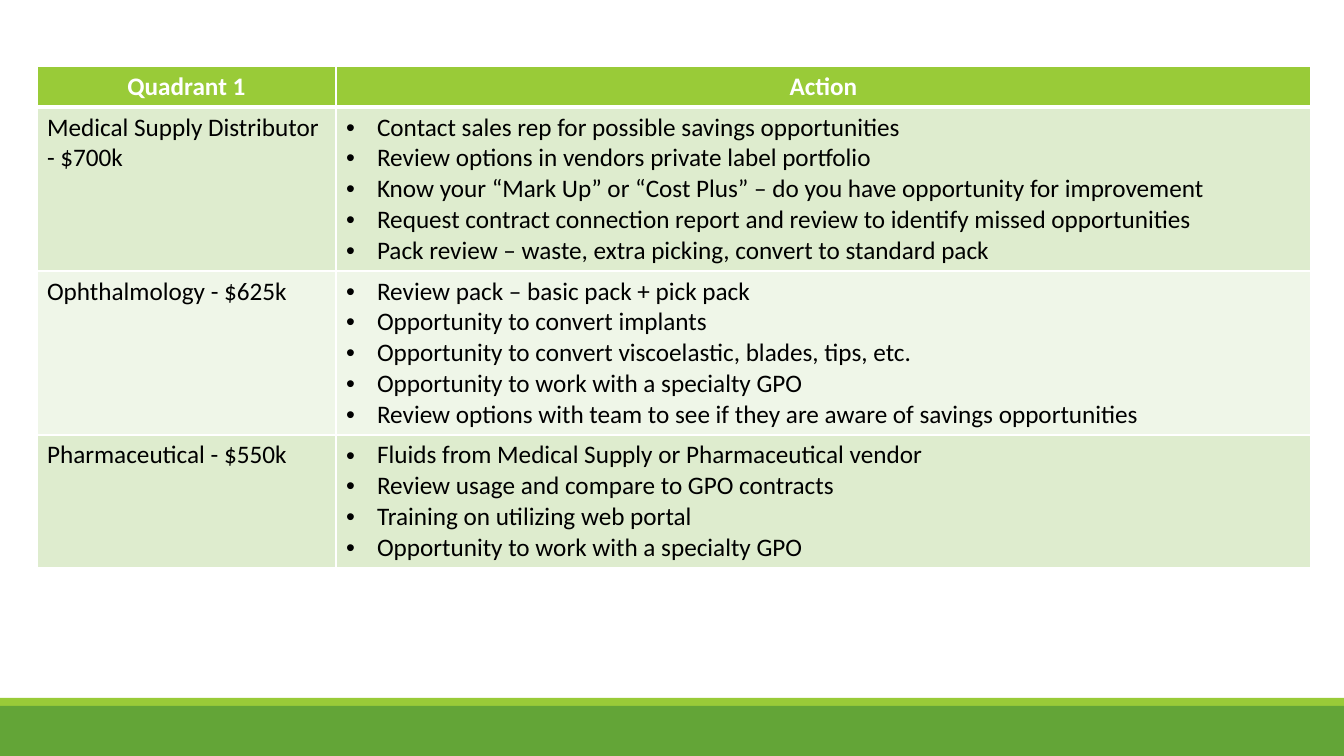
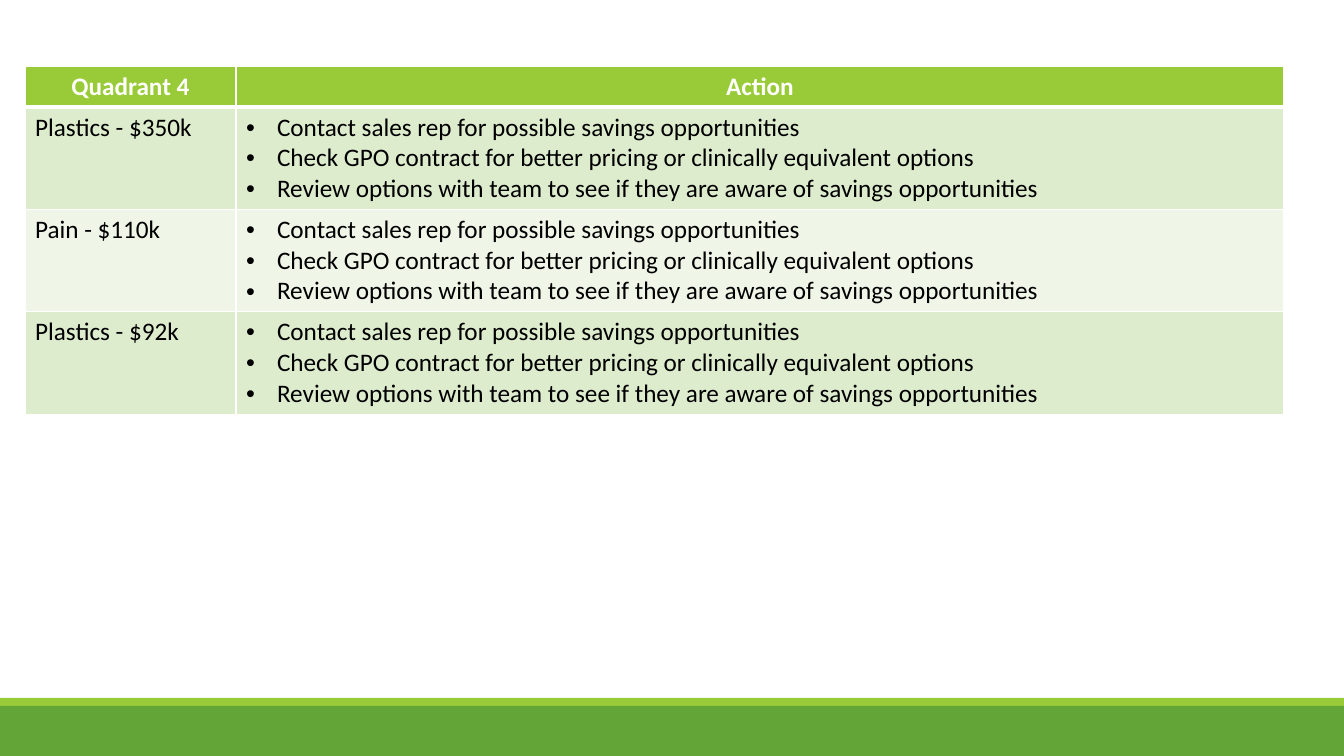
"""Build two spend quadrant slides, each with a table of savings actions."""
import pptx
import pptx.dml.color
import pptx.enum.shapes
import pptx.enum.text
import pptx.oxml.ns
import pptx.util
from lxml import etree

RGBColor = pptx.dml.color.RGBColor
PP_ALIGN = pptx.enum.text.PP_ALIGN

LIME = RGBColor(0x99, 0xCB, 0x38)
GREEN = RGBColor(0x63, 0xA5, 0x37)
ROW_DARK = RGBColor(0xDE, 0xEC, 0xCE)
ROW_LIGHT = RGBColor(0xEF, 0xF6, 0xE8)
WHITE = RGBColor(0xFF, 0xFF, 0xFF)
BLACK = RGBColor(0, 0, 0)
FONT = "Calibri"

SLIDE_WIDTH, SLIDE_HEIGHT = 1344, 756
EMU_PER_PX = pptx.util.Inches(1) / 100.8
TABLE_TOP = 66
LINE_HEIGHT, ROW_PADDING = 30.7, 10
BULLET_INDENT = 31
BANDS = [(698, 8, LIME), (706, 50, GREEN)]

CONTACT = "Contact sales rep for possible savings opportunities"
TEAM_REVIEW = "Review options with team to see if they are aware of savings opportunities"
SPECIALTY_GPO = "Opportunity to work with a specialty GPO"
STANDARD_ACTIONS = [
    CONTACT,
    "Check GPO contract for better pricing or clinically equivalent options",
    TEAM_REVIEW,
]

QUADRANTS = [
    {
        "title": "Quadrant 1",
        "left": 37,
        "columns": (299, 975),
        "categories": [
            ("Medical Supply Distributor - $700k", [
                CONTACT,
                "Review options in vendors private label portfolio",
                "Know your “Mark Up” or “Cost Plus” – do you have opportunity for improvement",
                "Request contract connection report and review to identify missed opportunities",
                "Pack review – waste, extra picking, convert to standard pack",
            ]),
            ("Ophthalmology - $625k", [
                "Review pack – basic pack + pick pack",
                "Opportunity to convert implants",
                "Opportunity to convert viscoelastic, blades, tips, etc.",
                SPECIALTY_GPO,
                TEAM_REVIEW,
            ]),
            ("Pharmaceutical - $550k", [
                "Fluids from Medical Supply or Pharmaceutical vendor",
                "Review usage and compare to GPO contracts",
                "Training on utilizing web portal",
                SPECIALTY_GPO,
            ]),
        ],
    },
    {
        "title": "Quadrant 4",
        "left": 25,
        "columns": (211, 1048),
        "categories": [
            ("Plastics - $350k", STANDARD_ACTIONS),
            ("Pain - $110k", STANDARD_ACTIONS),
            ("Plastics - $92k", STANDARD_ACTIONS),
        ],
    },
]


def px(length):
    return pptx.util.Emu(round(length * EMU_PER_PX))


def add_xml(parent, tag, **attributes):
    element = etree.SubElement(parent, pptx.oxml.ns.qn(tag))
    for name, value in attributes.items():
        element.set(name, str(value))
    return element


def write_text(frame, lines, size=18, color=BLACK, bold=False,
               align=PP_ALIGN.LEFT, bullets=False):
    for index, line in enumerate(lines):
        paragraph = frame.paragraphs[0] if index == 0 else frame.add_paragraph()
        paragraph.alignment = align
        if bullets:
            properties = paragraph._p.get_or_add_pPr()
            properties.set("marL", str(px(BULLET_INDENT)))
            properties.set("indent", str(-px(BULLET_INDENT)))
            add_xml(properties, "a:buFont", typeface="Arial")
            add_xml(properties, "a:buChar", char="•")
        run = paragraph.add_run()
        run.text = line
        run.font.name = FONT
        run.font.size = pptx.util.Pt(size)
        run.font.bold = bold
        run.font.color.rgb = color


def style_cell(cell, fill, top=1, bottom=1):
    properties = cell._tc.get_or_add_tcPr()
    for side, width in (("L", 1), ("R", 1), ("T", top), ("B", bottom)):
        border = add_xml(properties, f"a:ln{side}", w=pptx.util.Pt(width))
        add_xml(add_xml(border, "a:solidFill"), "a:srgbClr", val=WHITE)
    cell.fill.solid()
    cell.fill.fore_color.rgb = fill


def add_master_bands(master, slide):
    for top, height, color in BANDS:
        band = slide.shapes.add_shape(
            pptx.enum.shapes.MSO_SHAPE.RECTANGLE,
            0, px(top), px(SLIDE_WIDTH), px(height))
        band.shadow.inherit = False
        band.fill.solid()
        band.fill.fore_color.rgb = color
        band.line.fill.background()
        master.shapes.element.append(band.element)


def add_action_table(slide, quadrant):
    categories = quadrant["categories"]
    line_counts = [1] + [len(actions) for _, actions in categories]
    heights = [round(ROW_PADDING + LINE_HEIGHT * count) for count in line_counts]
    table = slide.shapes.add_table(
        len(heights), 2, px(quadrant["left"]), px(TABLE_TOP),
        px(sum(quadrant["columns"])), px(sum(heights))).table
    for column, width in zip(table.columns, quadrant["columns"]):
        column.width = px(width)
    for row, height in zip(table.rows, heights):
        row.height = px(height)

    for column, heading in enumerate((quadrant["title"], "Action")):
        cell = table.cell(0, column)
        style_cell(cell, LIME, bottom=3)
        write_text(cell.text_frame, [heading], color=WHITE, bold=True,
                   align=PP_ALIGN.CENTER)
    for row, (category, actions) in enumerate(categories, start=1):
        for column, lines in enumerate(([category], actions)):
            cell = table.cell(row, column)
            style_cell(cell, ROW_DARK if row % 2 else ROW_LIGHT,
                       top=3 if row == 1 else 1)
            write_text(cell.text_frame, lines, bullets=column == 1)


def main():
    deck = pptx.Presentation()
    deck.slide_width, deck.slide_height = px(SLIDE_WIDTH), px(SLIDE_HEIGHT)
    blank = deck.slide_layouts[6]
    for index, quadrant in enumerate(QUADRANTS):
        slide = deck.slides.add_slide(blank)
        if index == 0:
            add_master_bands(deck.slide_master, slide)
        add_action_table(slide, quadrant)
    deck.save("out.pptx")


if __name__ == "__main__":
    main()
